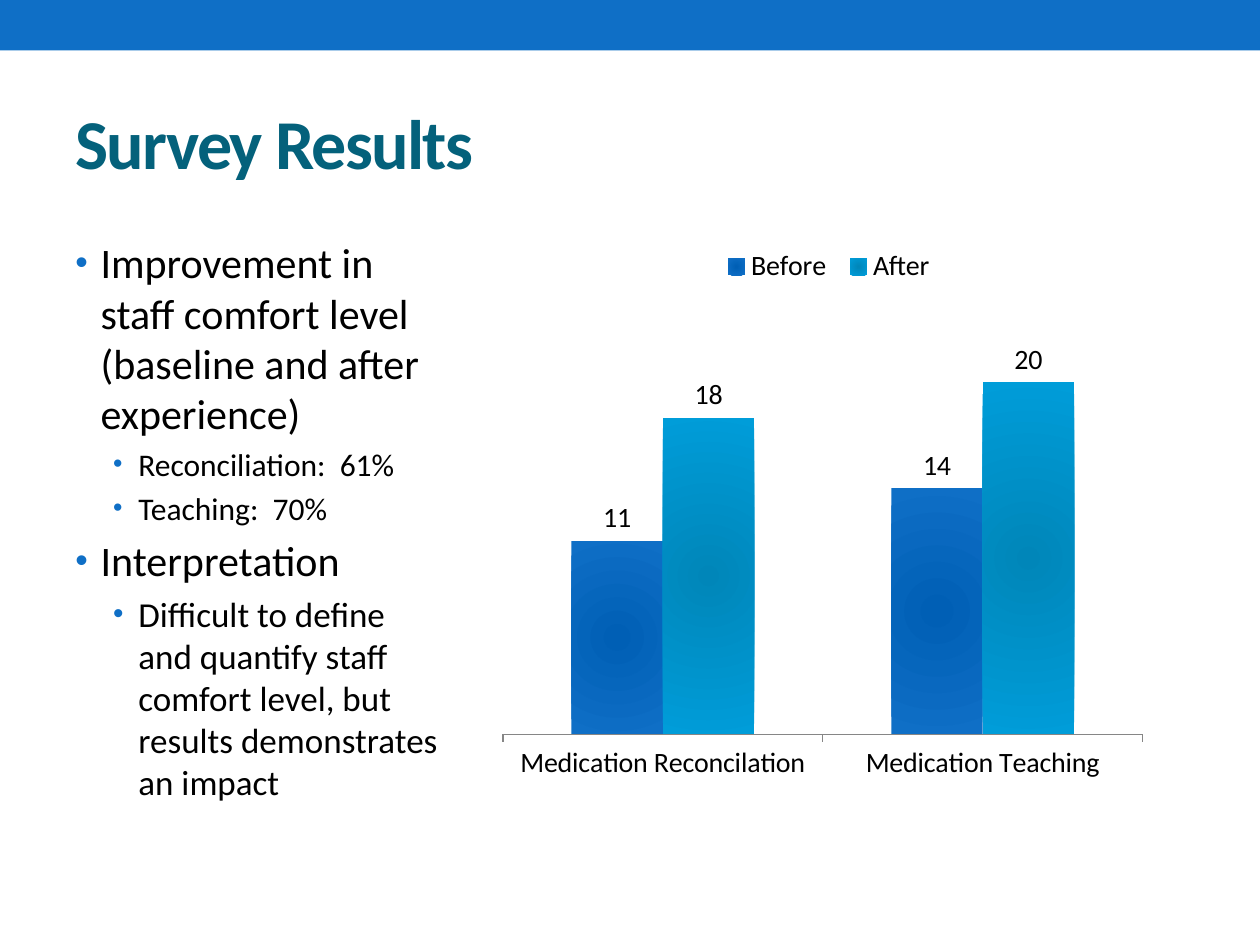
"""Build the survey results slide with a bullet list and a column chart."""
from lxml.etree import SubElement
from pptx import Presentation
from pptx.chart.data import CategoryChartData
from pptx.dml.color import RGBColor
from pptx.enum.chart import XL_CHART_TYPE, XL_LABEL_POSITION, XL_LEGEND_POSITION, XL_TICK_MARK
from pptx.enum.shapes import MSO_SHAPE
from pptx.enum.text import MSO_ANCHOR, PP_ALIGN
from pptx.oxml.ns import qn
from pptx.util import Pt

COLORS = {
    "blue": "0F6FC6",
    "blue_center": "005FB5",
    "cyan": "009DD9",
    "cyan_center": "0086B9",
    "title": "04617B",
    "text": "000000",
    "axis": "868686",
}
FONT = "Calibri"


def color(name):
    return RGBColor.from_string(COLORS[name])


def set_font(font, size, name="text", bold=False):
    font.name = FONT
    font.size = Pt(size)
    font.bold = bold
    font.color.rgb = color(name)


presentation = Presentation()
presentation.slide_width, presentation.slide_height = Pt(720), Pt(540)
slide = presentation.slides.add_slide(presentation.slide_layouts[5])

band = slide.shapes.add_shape(MSO_SHAPE.RECTANGLE, 0, 0, Pt(720), Pt(28.8))
band.shadow.inherit = False
band.fill.solid()
band.fill.fore_color.rgb = color("blue")
band.line.fill.background()

title = slide.shapes.title
title.left, title.top, title.width, title.height = Pt(36), Pt(41.76), Pt(648), Pt(77.76)
title.text_frame.text = "Survey Results"
title.text_frame.vertical_anchor = MSO_ANCHOR.MIDDLE
paragraph = title.text_frame.paragraphs[0]
paragraph.alignment = PP_ALIGN.LEFT
set_font(paragraph.font, 40, "title", bold=True)
paragraph.runs[0]._r.get_or_add_rPr().set("spc", "-100")

bullets = [
    (0, 24, "Improvement in staff comfort level (baseline and after experience)"),
    (1, 18, "Reconciliation:  61%"),
    (1, 18, "Teaching:  70%"),
    (0, 24, "Interpretation"),
    (1, 20, "Difficult to define and quantify staff comfort level, but results demonstrates an impact"),
]
body = slide.shapes.add_textbox(Pt(36), Pt(131.76), Pt(221.76), Pt(371.52))
body.text_frame.word_wrap = True
for index, (level, size, text) in enumerate(bullets):
    paragraph = body.text_frame.add_paragraph() if index else body.text_frame.paragraphs[0]
    paragraph.text = text
    paragraph.level = level
    paragraph.space_before = Pt(size * 0.2)
    properties = paragraph._p.get_or_add_pPr()
    properties.set("marL", str(Pt(14.4 + 21.6 * level)))
    properties.set("indent", str(Pt(-14.4)))
    bullet_color = SubElement(properties, qn("a:buClr"))
    SubElement(bullet_color, qn("a:srgbClr"), val=COLORS["blue"])
    SubElement(properties, qn("a:buSzPct"), val="85000")
    SubElement(properties, qn("a:buFont"), typeface="Arial")
    SubElement(properties, qn("a:buChar"), char="•")
    set_font(paragraph.font, size)

chart_data = CategoryChartData()
chart_data.categories = ["Medication Reconcilation", "Medication Teaching"]
chart_data.add_series("Before", (11, 14))
chart_data.add_series("After", (18, 20))
chart = slide.shapes.add_chart(
    XL_CHART_TYPE.COLUMN_CLUSTERED, Pt(275.76), Pt(108), Pt(388.08), Pt(370.08), chart_data
).chart
chart.has_title = False
set_font(chart.font, 18)

chart.has_legend = True
chart.legend.position = XL_LEGEND_POSITION.TOP
chart.legend.include_in_layout = False
set_font(chart.legend.font, 16)

chart.value_axis.visible = False
chart.value_axis.has_major_gridlines = False
chart.value_axis.minimum_scale = 0
chart.value_axis.maximum_scale = 25
chart.category_axis.major_tick_mark = XL_TICK_MARK.OUTSIDE
chart.category_axis.format.line.color.rgb = color("axis")
set_font(chart.category_axis.tick_labels.font, 16)

plot = chart.plots[0]
plot.gap_width = 150
plot.overlap = 0
plot.vary_by_categories = False
plot.has_data_labels = True
plot.data_labels.show_value = True
plot.data_labels.position = XL_LABEL_POSITION.OUTSIDE_END
set_font(plot.data_labels.font, 16)

for series, name in zip(plot.series, ("blue", "cyan")):
    fill = series.format.fill
    fill.gradient()
    for stop, stop_color in zip(fill.gradient_stops, (name + "_center", name)):
        stop.color.rgb = color(stop_color)
    gradient = series._element.find(".//" + qn("a:gradFill"))
    gradient.remove(gradient.find(qn("a:lin")))
    radial = SubElement(gradient, qn("a:path"), path="circle")
    SubElement(radial, qn("a:fillToRect"), l="50000", t="50000", r="50000", b="50000")

plot_area = chart._chartSpace.chart.plotArea
plot_layout = plot_area.find(qn("c:layout"))
if plot_layout is None:
    plot_layout = plot_area.makeelement(qn("c:layout"))
    plot_area.insert(0, plot_layout)
legend_layout = chart.legend._element.find(qn("c:layout"))
if legend_layout is None:
    legend_layout = chart.legend._element.makeelement(qn("c:layout"))
    chart.legend._element.find(qn("c:legendPos")).addnext(legend_layout)
layouts = [(plot_layout, (0.03, 0.163, 0.942, 0.679)), (legend_layout, (0.34, 0.09, 0.34, 0.06))]
for layout, bounds in layouts:
    manual = SubElement(layout, qn("c:manualLayout"))
    if layout is plot_layout:
        SubElement(manual, qn("c:layoutTarget"), val="inner")
    for tag in ("xMode", "yMode"):
        SubElement(manual, qn("c:" + tag), val="edge")
    for tag, value in zip("xywh", bounds):
        SubElement(manual, qn("c:" + tag), val=str(value))

presentation.save("out.pptx")
